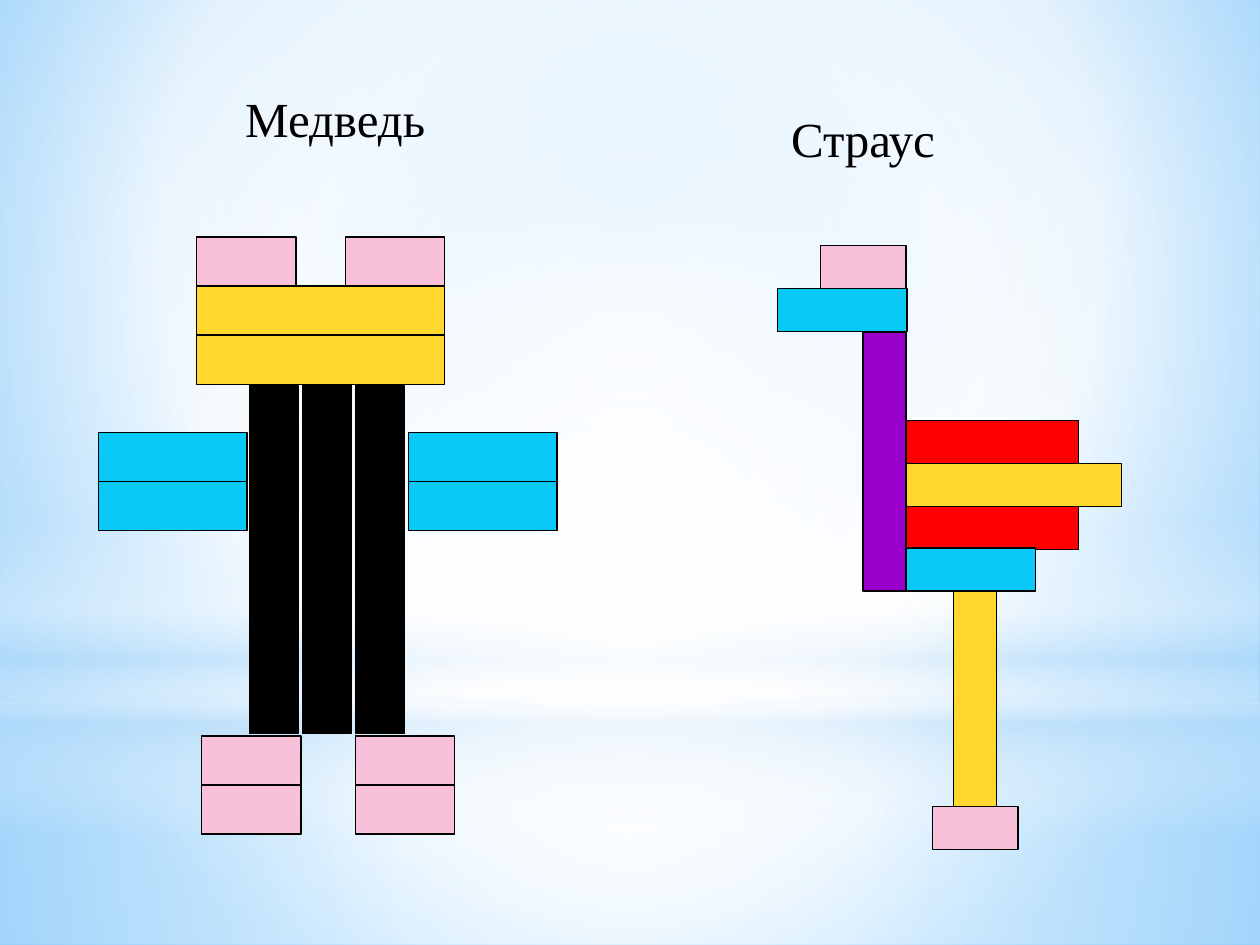
"""Build a slide with a bear and an ostrich assembled from coloured bricks."""
import lxml.etree
import pptx
import pptx.dml.color
import pptx.enum.shapes
import pptx.enum.text
import pptx.oxml
import pptx.oxml.ns
import pptx.util

Inches = pptx.util.Inches
RGBColor = pptx.dml.color.RGBColor
Shape = pptx.enum.shapes.MSO_SHAPE

COLOURS = {
    "black": "000000", "yellow": "FFD72D", "blue": "09CAF7", "pink": "F8C0D9",
    "red": "FF0000", "purple": "9900CC", "white": "FFFFFF", "haze": "B4DCFA",
    "sky": "9ED5FF", "deep sky": "5BB9FF",
}
CENTRE = (50, 50, 50, 50)


def set_gradient(fill, stops, focus=None):
    """Give a fill (position, colour, opacity) stops, round a focus or downwards."""
    fill.gradient()
    gradient = fill._fill._gradFill
    for child in list(gradient):
        gradient.remove(child)
    stop_list = lxml.etree.SubElement(gradient, pptx.oxml.ns.qn("a:gsLst"))
    for position, colour, opacity in stops:
        stop = lxml.etree.SubElement(stop_list, pptx.oxml.ns.qn("a:gs"), pos=str(position * 1000))
        tint = lxml.etree.SubElement(stop, pptx.oxml.ns.qn("a:srgbClr"), val=COLOURS[colour])
        lxml.etree.SubElement(tint, pptx.oxml.ns.qn("a:alpha"), val=str(opacity * 1000))
    if focus:
        route = lxml.etree.SubElement(gradient, pptx.oxml.ns.qn("a:path"), path="circle")
        edges = {side: str(value * 1000) for side, value in zip("ltrb", focus)}
        lxml.etree.SubElement(route, pptx.oxml.ns.qn("a:fillToRect"), **edges)
    else:
        lxml.etree.SubElement(gradient, pptx.oxml.ns.qn("a:lin"), ang="5400000", scaled="0")


def add_plain_shape(shapes, kind, left, top, width, height):
    """Add a preset shape without shadow, placed in inches."""
    shape = shapes.add_shape(kind, Inches(left), Inches(top), Inches(width), Inches(height))
    shape.shadow.inherit = False
    return shape


deck = pptx.Presentation()
deck.slide_width, deck.slide_height = Inches(10), Inches(7.5)
page = deck.slides.add_slide(deck.slide_layouts[6])
set_gradient(page.background.fill,
             [(0, "sky", 100), (60, "white", 100), (100, "deep sky", 100)], (20, 10, 20, 60))

glows = [
    (Shape.RECTANGLE, 5.58, 1.92, [(0, "white", 91), (37, "white", 76), (100, "haze", 79)], CENTRE),
    (Shape.RECTANGLE, 0, 5.58, [(0, "white", 89), (48, "white", 62), (100, "haze", 79)], CENTRE),
    (Shape.RECTANGLE, 4.12, 2.5, [(0, "white", 0), (29, "white", 30), (45, "haze", 40),
                                  (55, "white", 26), (65, "haze", 60), (100, "white", 0)], None),
    (Shape.OVAL, 1.75, 5.58, [(0, "white", 100), (56, "white", 0)], CENTRE),
]
for kind, top, height, stops, focus in glows:
    glow = add_plain_shape(page.shapes, kind, 0, top, 10, height)
    set_gradient(glow.fill, stops, focus)
    glow.line.fill.background()

for name, left, top in [("Медведь", 0.83, 0.52), ("Страус", 5.02, 0.68)]:
    box = page.shapes.add_textbox(Inches(left), Inches(top), Inches(3.66), Inches(0.7))
    box.text_frame.word_wrap = True
    box.text_frame.vertical_anchor = pptx.enum.text.MSO_ANCHOR.BOTTOM
    para = box.text_frame.paragraphs[0]
    para.text = name
    para.alignment = pptx.enum.text.PP_ALIGN.CENTER
    para.space_after = pptx.util.Pt(3)
    para.font.name = "Times New Roman"
    para.font.size = pptx.util.Pt(28)
    para.font.color.rgb = RGBColor.from_string(COLOURS["black"])

thick = 0.39
bear = [("black", left, 3.06, thick, 2.76) for left in (1.98, 2.4, 2.82)]
for row in range(2):
    drop = row * thick
    bear.append(("yellow", 1.56, 2.27 + drop, 1.97, thick))
    bear += [("blue", left, 3.43 + drop, 1.18, thick) for left in (0.78, 3.24)]
    bear += [("pink", left, 5.84 + drop, 0.79, thick) for left in (1.6, 2.82)]
bear += [("pink", left, 1.88, 0.79, thick) for left in (1.56, 2.74)]

thin = 0.34
ostrich = [
    ("red", 7.19, 4.02, 1.37, thin),
    ("red", 7.19, 3.34, 1.37, thin),
    ("pink", 6.51, 1.95, 0.68, thin),
    ("pink", 7.4, 6.4, 0.68, thin),
    ("blue", 6.17, 2.29, 1.03, thin),
    ("blue", 7.19, 4.35, 1.03, thin),
    ("purple", 6.85, 2.64, thin, 2.05),
    ("yellow", 7.57, 4.69, thin, 1.71),
    ("yellow", 7.19, 3.68, 1.71, thin),
]

for animal in (bear, ostrich):
    group = page.shapes.add_group_shape()
    for colour, left, top, width, height in animal:
        brick = add_plain_shape(group.shapes, Shape.RECTANGLE, left, top, width, height)
        brick.fill.solid()
        brick.fill.fore_color.rgb = RGBColor.from_string(COLOURS[colour])
        brick.line.color.rgb = RGBColor.from_string(COLOURS["black"])
        brick.line.width = pptx.util.Pt(0.75)

deck.save("out.pptx")
